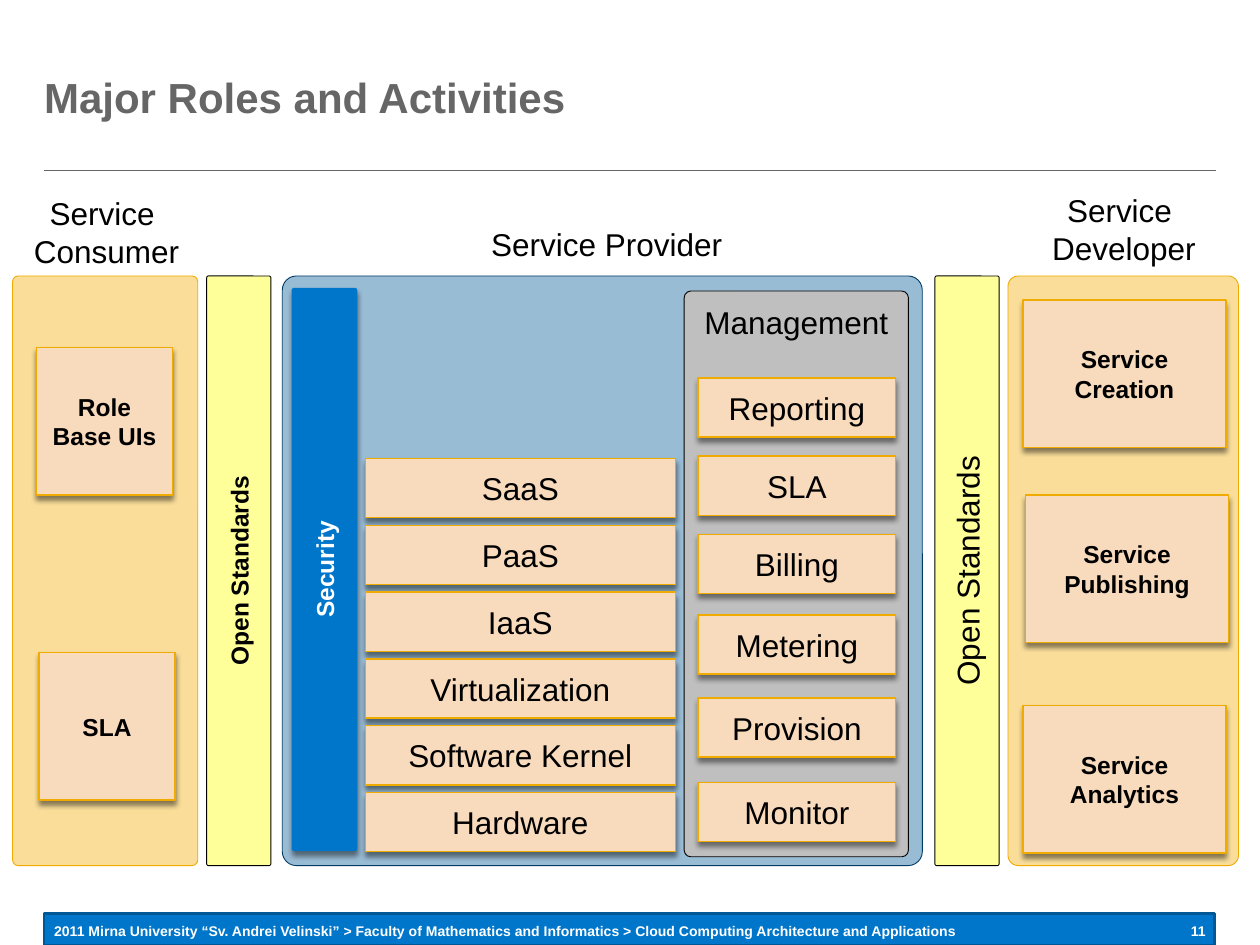
from lxml import etree
from pptx import Presentation
from pptx.dml.color import RGBColor
from pptx.enum.shapes import MSO_CONNECTOR, MSO_SHAPE
from pptx.enum.text import MSO_ANCHOR as Anchor, MSO_AUTO_SIZE as AutoSize, PP_ALIGN as Align
from pptx.oxml.ns import qn
from pptx.util import Inches, Pt

BLACK = RGBColor(0x00, 0x00, 0x00)
WHITE = RGBColor(0xFF, 0xFF, 0xFF)
GRAY = RGBColor(0x66, 0x66, 0x66)
SILVER = RGBColor(0xBF, 0xBF, 0xBF)
AMBER = RGBColor(0xF0, 0xAB, 0x00)
PEACH = RGBColor(0xF8, 0xDA, 0xBD)
YELLOW = RGBColor(0xFF, 0xFF, 0x00)
BLUE = RGBColor(0x00, 0x76, 0xCB)
BLUE_EDGE = RGBColor(0x00, 0x57, 0x96)
NAVY = RGBColor(0x00, 0x58, 0x98)
NAVY_EDGE = RGBColor(0x00, 0x3B, 0x66)

COLUMN_TOP, COLUMN_HEIGHT = 2.19, 4.68
FOOTER = (
    "2011 Mirna University “Sv. Andrei Velinski” > Faculty of Mathematics and "
    "Informatics > Cloud Computing Architecture and Applications"
)


def write_text(shape, text, size=18, bold=False, color=BLACK, align=Align.CENTER,
               anchor=Anchor.MIDDLE, insets=(0.1, 0.08, 0.1, 0.08), wrap=True,
               vertical=False):
    """Put formatted text into a shape; a vertical tab breaks the line."""
    frame = shape.text_frame
    frame.word_wrap = wrap
    frame.vertical_anchor = anchor
    (frame.margin_left, frame.margin_top,
     frame.margin_right, frame.margin_bottom) = map(Inches, insets)
    if vertical:
        shape.element.txBody.find(qn("a:bodyPr")).set("vert", "vert270")
    frame.text = text
    paragraph = frame.paragraphs[0]
    paragraph.alignment = align
    for run in paragraph.runs:
        run.font.name = "Arial"
        run.font.size = Pt(size)
        run.font.bold = bold
        run.font.color.rgb = color


def add_label(slide, box, text, **text_format):
    """Add a text box that grows with its text."""
    shape = slide.shapes.add_textbox(*map(Inches, box))
    write_text(shape, text, anchor=Anchor.TOP, **text_format)
    shape.text_frame.auto_size = AutoSize.SHAPE_TO_FIT_TEXT


def set_opacity(shape, percent):
    """Make the solid fill of a shape translucent."""
    color = shape.element.spPr.find(qn("a:solidFill"))[0]
    etree.SubElement(color, qn("a:alpha"), val=str(percent * 1000))


def add_drop_shadow(shape):
    """Give a shape a soft shadow straight below it."""
    effects = shape.element.spPr.find(qn("a:effectLst"))
    shadow = etree.SubElement(effects, qn("a:outerShdw"), blurRad=str(Pt(3)),
                              dist=str(Pt(2.4)), dir="5400000", rotWithShape="0")
    color = etree.SubElement(shadow, qn("a:srgbClr"), val="000000")
    etree.SubElement(color, qn("a:alpha"), val="45000")


def add_panel(slide, box, fill, edge, width=0.5, radius=None, opacity=None, shadow=False):
    """Add a filled rectangle, rounded when a radius is given."""
    kind = MSO_SHAPE.RECTANGLE if radius is None else MSO_SHAPE.ROUNDED_RECTANGLE
    shape = slide.shapes.add_shape(kind, *map(Inches, box))
    if radius is not None:
        shape.adjustments[0] = radius
    shape.fill.solid()
    shape.fill.fore_color.rgb = fill
    shape.line.color.rgb = edge
    shape.line.width = Pt(width)
    shape.shadow.inherit = False
    if opacity:
        set_opacity(shape, opacity)
    if shadow:
        add_drop_shadow(shape)
    return shape


def add_card(slide, box, text, **text_format):
    """Add a peach activity card with a shadow."""
    card = add_panel(slide, box, PEACH, AMBER, width=0.79, shadow=True)
    write_text(card, text, **text_format)


def add_frame(slide):
    """Add the title, the rule below it and the footer bar."""
    title = slide.shapes.title
    title.left, title.top, title.width, title.height = map(Inches, (0.35, 0.35, 9.29, 0.83))
    write_text(title, "Major Roles and Activities", size=24, bold=True, color=GRAY,
               align=Align.LEFT, insets=(0, 0, 0, 0))
    rule = slide.shapes.add_connector(
        MSO_CONNECTOR.STRAIGHT, *map(Inches, (0.35, 1.35, 9.65, 1.35)))
    rule.line.color.rgb = GRAY
    rule.line.width = Pt(0.5)
    etree.SubElement(rule.element.spPr, qn("a:effectLst"))
    add_panel(slide, (0.35, 7.25, 9.29, 0.25), BLUE, BLUE_EDGE, width=1.5)
    footer_format = dict(size=8, bold=True, color=WHITE, wrap=False)
    add_label(slide, (0.35, 7.32, 7.4, 0.13), FOOTER, align=Align.LEFT,
              insets=(0.08, 0, 0, 0), **footer_format)
    add_label(slide, (9.43, 7.32, 0.22, 0.13), "11", align=Align.RIGHT,
              insets=(0, 0, 0.08, 0), **footer_format)


def add_columns(slide):
    """Add the three role columns, their headings and the standards bars."""
    for left, width, fill, edge, radius in (
        (0.1, 1.47, AMBER, AMBER, 0.03),
        (2.24, 5.08, NAVY, NAVY_EDGE, 0.024),
        (8, 1.83, AMBER, AMBER, 0.045),
    ):
        add_panel(slide, (left, COLUMN_TOP, width, COLUMN_HEIGHT), fill, edge,
                  radius=radius, opacity=40)
    for box, heading in (
        ((0.1, 1.49, 1.49, 0.71), "Service \vConsumer"),
        ((2.28, 1.74, 5.07, 0.4), "Service Provider"),
        ((8.01, 1.47, 1.82, 0.71), "Service \vDeveloper"),
    ):
        add_label(slide, box, heading, insets=(0.1, 0.05, 0.1, 0.05))
    for left, size, bold in ((1.64, 14, True), (7.42, 18, False)):
        bar = add_panel(slide, (left, COLUMN_TOP, 0.51, COLUMN_HEIGHT), YELLOW, BLACK,
                        radius=0.03, opacity=40)
        write_text(bar, "Open Standards", size=size, bold=bold, vertical=True)


def add_role_cards(slide):
    """Add the cards of the consumer and the developer."""
    for left, top, width, text in (
        (0.29, 2.76, 1.08, "Role Base UIs"),
        (0.31, 5.18, 1.08, "SLA"),
        (8.12, 2.38, 1.61, "Service Creation"),
        (8.14, 3.93, 1.61, "Service Publishing"),
        (8.12, 5.6, 1.61, "Service Analytics"),
    ):
        add_card(slide, (left, top, width, 1.17), text, size=14, bold=True)


def add_provider(slide):
    """Add security, the management panel and the service layers."""
    security = add_panel(slide, (2.32, 2.29, 0.51, 4.46), BLUE, BLUE, width=0.79,
                         radius=0.03, shadow=True)
    write_text(security, "Security", size=14, bold=True, color=WHITE, vertical=True)
    management = add_panel(slide, (5.43, 2.31, 1.78, 4.49), SILVER, BLACK, radius=0.03)
    write_text(management, "Management", anchor=Anchor.TOP)
    for top, activity in (
        (3, "Reporting"), (3.62, "SLA"), (4.24, "Billing"),
        (4.88, "Metering"), (5.54, "Provision"), (6.21, "Monitor"),
    ):
        add_card(slide, (5.54, top, 1.57, 0.47), activity)
    layers = ("SaaS", "PaaS", "IaaS", "Virtualization", "Software Kernel", "Hardware")
    for index, layer in enumerate(layers):
        add_card(slide, (2.9, 3.64 + 0.53 * index, 2.46, 0.47), layer)


def main():
    """Build the slide and save the presentation."""
    presentation = Presentation()
    presentation.slide_width, presentation.slide_height = Inches(10), Inches(7.5)
    slide = presentation.slides.add_slide(presentation.slide_layouts[5])
    add_frame(slide)
    add_columns(slide)
    add_role_cards(slide)
    add_provider(slide)
    presentation.save("out.pptx")


if __name__ == "__main__":
    main()
